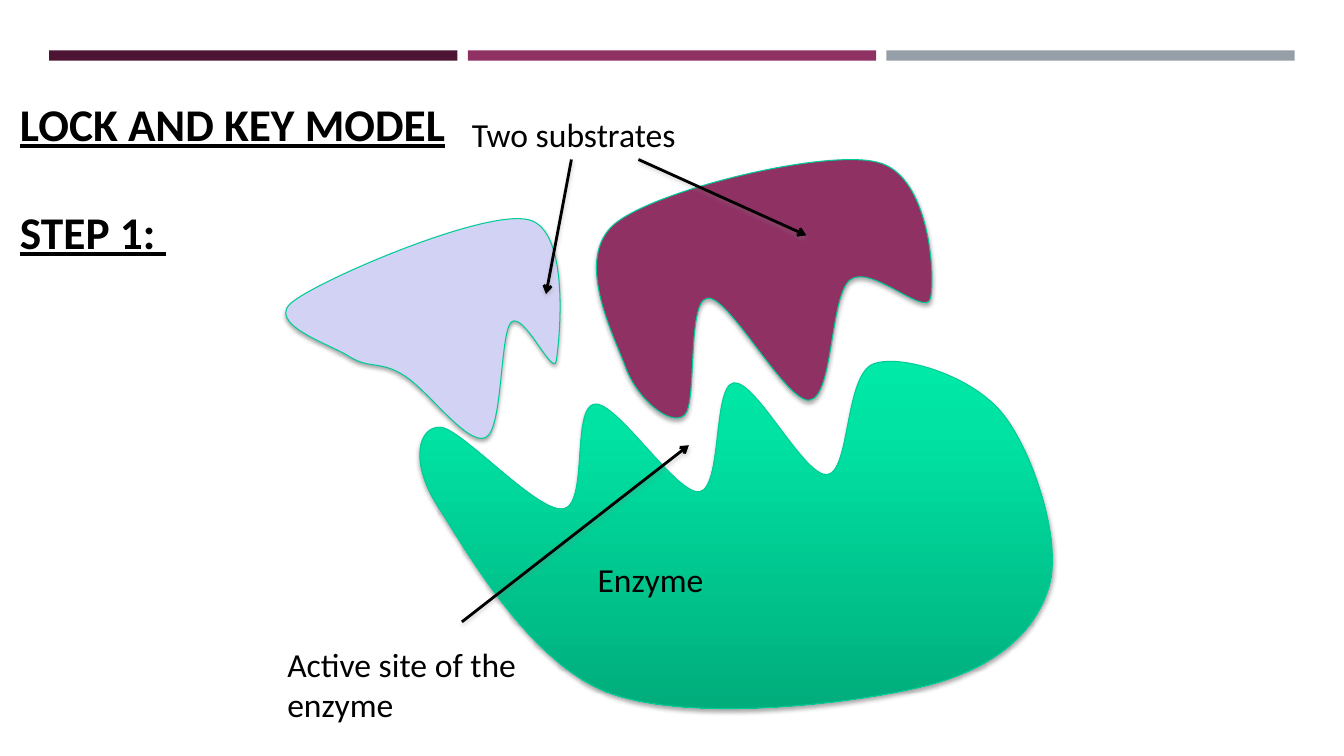
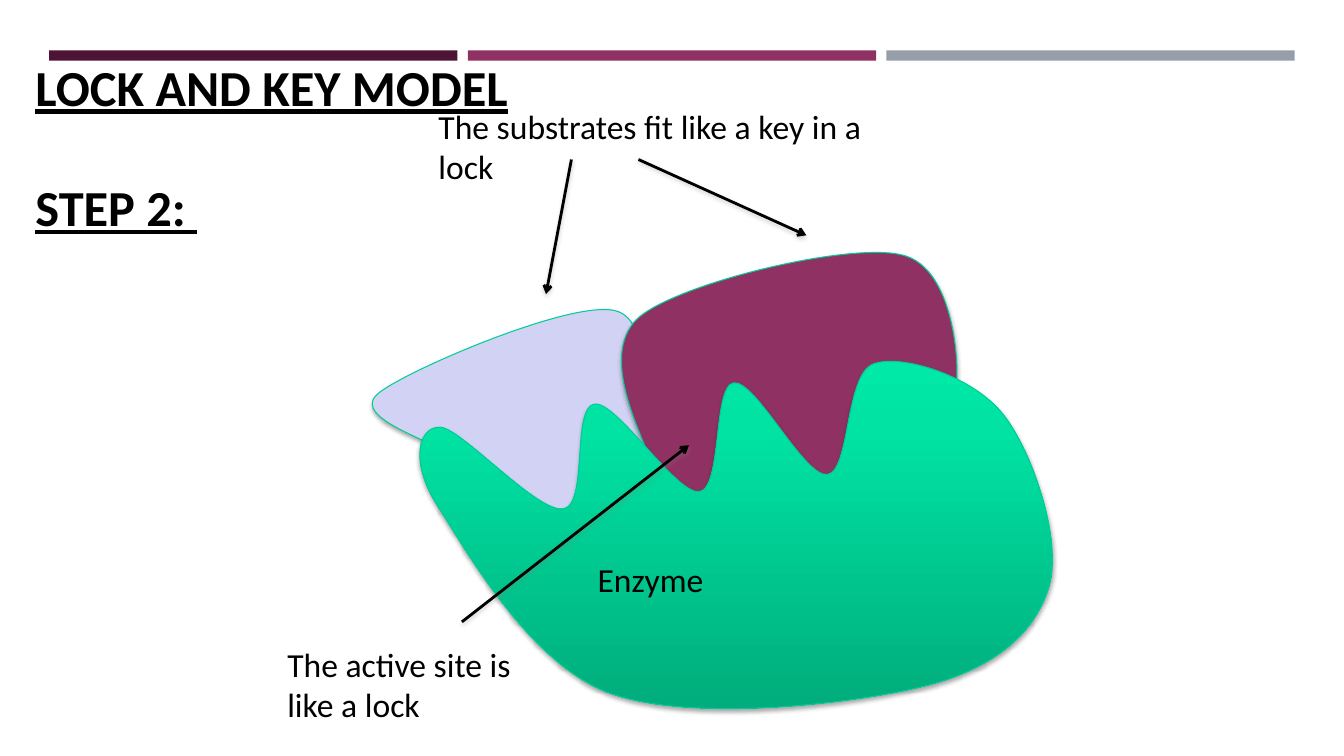
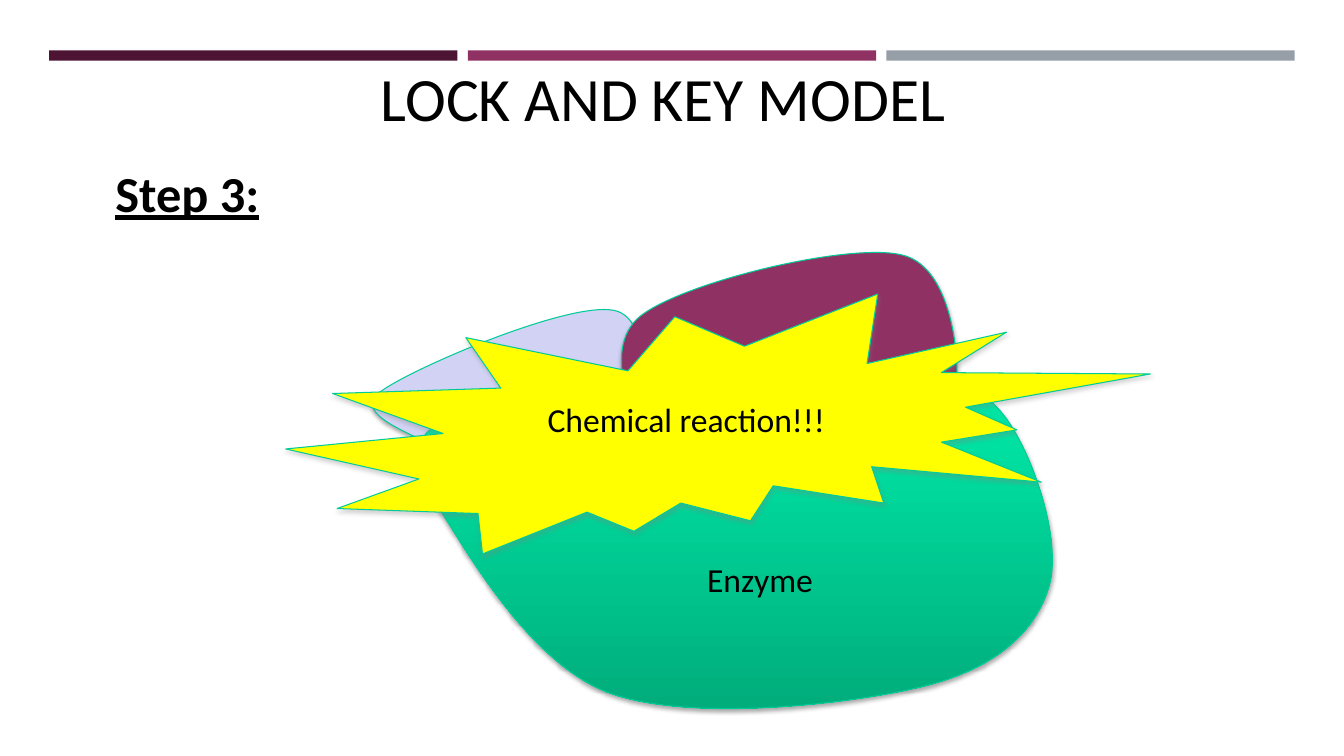
from lxml import etree
from pptx import Presentation
from pptx import util as u
from pptx.dml import color
from pptx.enum import shapes as kinds
from pptx.enum import text as txt
from pptx.oxml import ns

FONT = "Calibri"
INK, EDGE, SHADE = "000000", "00CC98", "808080"
PLUM, LILAC, YELLOW = "903163", "D2D2F4", "FFFF00"
BANDS = ("4D1434", PLUM, "969FA7")
ENZYME_STOPS = ((0, "00E9A6"), (20, "00E3A3"), (100, "00AD7B"))
HEADING = {"bold": True, "underline": True}
SIDES = ("left", "top", "width", "height")

SMALL_SIZE, LARGE_SIZE = (6.93, 5.54), (8.46, 6.53)
ENZYME_BOX = (10.59, 9.09, 15.93, 8.74)
APART = ((7.19, 5.51), (15.04, 4.01))
DOCKED = ((9.37, 7.8), (15.67, 6.35))

SMALL_OUTLINE = (273, 218, (64, 137), (
    (83, 149, 95, 141, 117, 155), (140, 168, 181, 226, 199, 217),
    (216, 209, 213, 116, 224, 103), (236, 90, 266, 158, 269, 141),
    (272, 124, 284, 10, 241, 1), (197, -9, 38, 59, 8, 82),
    (-22, 104, 46, 125, 64, 137)))
LARGE_OUTLINE = (333, 257, (18, 64), (
    (-23, 98, 16, 173, 28, 205), (39, 237, 73, 266, 87, 254),
    (100, 243, 89, 140, 110, 138), (131, 135, 188, 242, 211, 239),
    (235, 236, 231, 137, 251, 120), (271, 103, 327, 158, 331, 138),
    (336, 118, 331, 15, 278, 3), (226, -10, 60, 30, 18, 64)))
ENZYME_OUTLINE = (627, 344, (20, 66), (
    (-1, 65, -11, 98, 16, 142), (44, 185, 106, 298, 186, 329),
    (266, 359, 426, 341, 499, 323), (572, 305, 611, 268, 624, 223),
    (637, 178, 607, 89, 578, 53), (549, 16, 479, -7, 450, 3),
    (421, 13, 427, 109, 404, 113), (381, 116, 333, 19, 311, 22),
    (290, 25, 300, 126, 277, 130), (254, 133, 195, 40, 173, 43),
    (150, 46, 167, 143, 142, 147), (116, 151, 41, 67, 20, 66)))


def rgb(value):
    """Turn a hex string into a colour."""
    return color.RGBColor.from_string(value)


def cm(*lengths):
    """Turn centimetres into a list of lengths."""
    return [u.Cm(length) for length in lengths]


def apply(target, values):
    """Set every attribute named in a dict of format values."""
    for name, value in values.items():
        setattr(target, name, value)


def style_font(font, size, **extra):
    """Give a font the deck's face and ink."""
    apply(font, {"name": FONT, "size": u.Pt(size), **extra})
    font.color.rgb = rgb(INK)


def add_effects(part, tint=None, distance=1.8):
    """Replace the theme's shadow by a soft one below, or by none."""
    effects = etree.SubElement(part.element.spPr, ns.qn("a:effectLst"))
    if tint:
        shadow = etree.SubElement(
            effects, ns.qn("a:outerShdw"), blurRad=str(u.Pt(3.1)),
            dist=str(u.Pt(distance)), dir="5400000", rotWithShape="0")
        tone = etree.SubElement(shadow, ns.qn("a:srgbClr"), val=tint)
        etree.SubElement(tone, ns.qn("a:alpha"), val="35000")


def paint(part, fill, tint=INK):
    """Fill a figure and give it the green edge and the shadow."""
    if isinstance(fill, str):
        part.fill.solid()
        part.fill.fore_color.rgb = rgb(fill)
    else:
        part.fill.gradient()
        part.fill.gradient_angle = 270
        stops = part.element.spPr.find(".//" + ns.qn("a:gsLst"))
        stops.clear()
        for percent, tone in fill:
            stop = etree.SubElement(stops, ns.qn("a:gs"), pos=str(percent * 1000))
            etree.SubElement(stop, ns.qn("a:srgbClr"), val=tone)
    part.line.color.rgb = rgb(EDGE)
    part.line.width = u.Pt(0.75)
    add_effects(part, tint)


def add_molecule(slide, box, outline, fill):
    """Draw a closed chain of cubic curves scaled to its box."""
    across, down, start, curves = outline
    builder = slide.shapes.build_freeform(*start)
    builder.add_line_segments([curve[4:] for curve in curves])
    molecule = builder.convert_to_shape()
    apply(molecule, dict(zip(SIDES, cm(*box))))
    contour = molecule.element.spPr.find(".//" + ns.qn("a:path"))
    contour.clear()
    apply(contour, {"w": across, "h": down})
    moves = [("a:moveTo", start)] + [("a:cubicBezTo", curve) for curve in curves]
    for tag, numbers in moves:
        move = etree.SubElement(contour, ns.qn(tag))
        for x, y in zip(numbers[::2], numbers[1::2]):
            etree.SubElement(move, ns.qn("a:pt"), x=str(x), y=str(y))
    etree.SubElement(contour, ns.qn("a:close"))
    paint(molecule, fill)


def add_label(shapes, words, box, size=24, **extra):
    """Add a wrapping label that grows with its text."""
    label = shapes.add_textbox(*cm(*box))
    apply(label.text_frame, {"word_wrap": True, "text": words,
                             "auto_size": txt.MSO_AUTO_SIZE.SHAPE_TO_FIT_TEXT})
    style_font(label.text_frame.paragraphs[0].runs[0].font, size, **extra)


def add_arrow(slide, start, end):
    """Draw a black arrow between two points."""
    arrow = slide.shapes.add_connector(
        kinds.MSO_CONNECTOR.STRAIGHT, *cm(*start, *end))
    arrow.line.color.rgb = rgb(INK)
    arrow.line.width = u.Pt(2)
    etree.SubElement(arrow.element.spPr.find(ns.qn("a:ln")),
                     ns.qn("a:tailEnd"), type="arrow")
    add_effects(arrow, SHADE, 1.6)


def set_title(slide, lines, left, top, size, align=txt.PP_ALIGN.LEFT, **extra):
    """Place the title, with one line's gap between its paragraphs."""
    title = slide.shapes.title
    apply(title, dict(zip(SIDES, cm(left, top, 21.59, 2.34))))
    frame = title.text_frame
    apply(frame, {"text": "\n".join(lines), "word_wrap": True,
                  "auto_size": txt.MSO_AUTO_SIZE.NONE,
                  "vertical_anchor": txt.MSO_ANCHOR.BOTTOM})
    for index, paragraph in enumerate(frame.paragraphs):
        apply(paragraph, {"alignment": align,
                          "space_before": u.Pt(1.19 * size if index else 0)})
        style_font(paragraph.runs[0].font, size, **extra)


def add_bands(layout, slide, left=1.24, top=1.27, width=10.29, pitch=10.55):
    """Put the three top bands on the layout that all slides share."""
    for index, tone in enumerate(BANDS):
        band = slide.shapes.add_shape(
            kinds.MSO_SHAPE.RECTANGLE, *cm(left + index * pitch, top, width, 0.26))
        band.fill.solid()
        band.fill.fore_color.rgb = rgb(tone)
        band.line.fill.background()
        add_effects(band)
        band.element.nvSpPr.cNvPr.set("id", str(20 + index))
        layout.shapes.element.append(band.element)


def add_complex(slide, places, name_offset=4.22):
    """Draw both substrates and the enzyme with its name."""
    small, large = places
    add_molecule(slide, small + SMALL_SIZE, SMALL_OUTLINE, LILAC)
    add_molecule(slide, large + LARGE_SIZE, LARGE_OUTLINE, PLUM)
    add_molecule(slide, ENZYME_BOX, ENZYME_OUTLINE, ENZYME_STOPS)
    left, top = ENZYME_BOX[:2]
    add_label(slide.shapes, "Enzyme", (left + name_offset, top + 4.88, 7.42, 1.3))


def add_callouts(slide, substrates, substrates_box, site, left=6.99, top=4.02):
    """Label the substrates and the active site, with their arrows."""
    x, y, width, height = substrates_box
    add_label(slide.shapes, substrates, (left + x, top + y, width, height))
    add_label(slide.shapes, site, (left, top + 12.07, 7.42, 2.31))
    for x1, y1, x2, y2 in ((9.1, 0, 13.33, 1.91), (7.41, 0, 6.77, 3.39),
                           (4.65, 11.65, 10.37, 7.2)):
        add_arrow(slide, (left + x1, top + y1), (left + x2, top + y2))


def add_burst(slide, left, top, width, height):
    """Group the burst with its caption."""
    group = slide.shapes.add_group_shape()
    burst = group.shapes.add_shape(
        kinds.MSO_SHAPE.EXPLOSION2, *cm(left, top, width, height))
    paint(burst, YELLOW, SHADE)
    add_label(group.shapes, "Chemical reaction!!!",
              (left + 6.35, top + 2.51, 9.32, 1.27))


def main():
    """Build the three steps and save them."""
    deck = Presentation()
    deck.slide_width, deck.slide_height = cm(33.87, 19.05)
    layout = deck.slide_layouts[5]
    first, second, third = [deck.slides.add_slide(layout) for _ in range(3)]
    add_bands(layout, first)
    model = "LOCK AND KEY MODEL"

    set_title(first, (model, "STEP 1: "), 0.25, 4.31, 32.4, **HEADING)
    add_complex(first, APART)
    add_callouts(first, "Two substrates", (4.65, -1.27, 7.42, 1.3),
                 "Active site of the enzyme")

    set_title(second, (model, "STEP 2: "), 0.64, 3.76, 36, **HEADING)
    add_complex(second, DOCKED)
    add_callouts(second, "The substrates fit like a key in a lock",
                 (3.81, -1.48, 11.63, 2.31), "The active site is like a lock")

    set_title(third, (model,), 5.92, 1.17, 44, txt.PP_ALIGN.CENTER)
    add_label(third.shapes, "Step 3:", (2.66, 3.96, 31.2, 1.8), 36, **HEADING)
    add_complex(third, DOCKED, name_offset=6.98)
    add_burst(third, 7.2, 7.41, 21.79, 6.55)

    deck.save("out.pptx")


if __name__ == "__main__":
    main()
